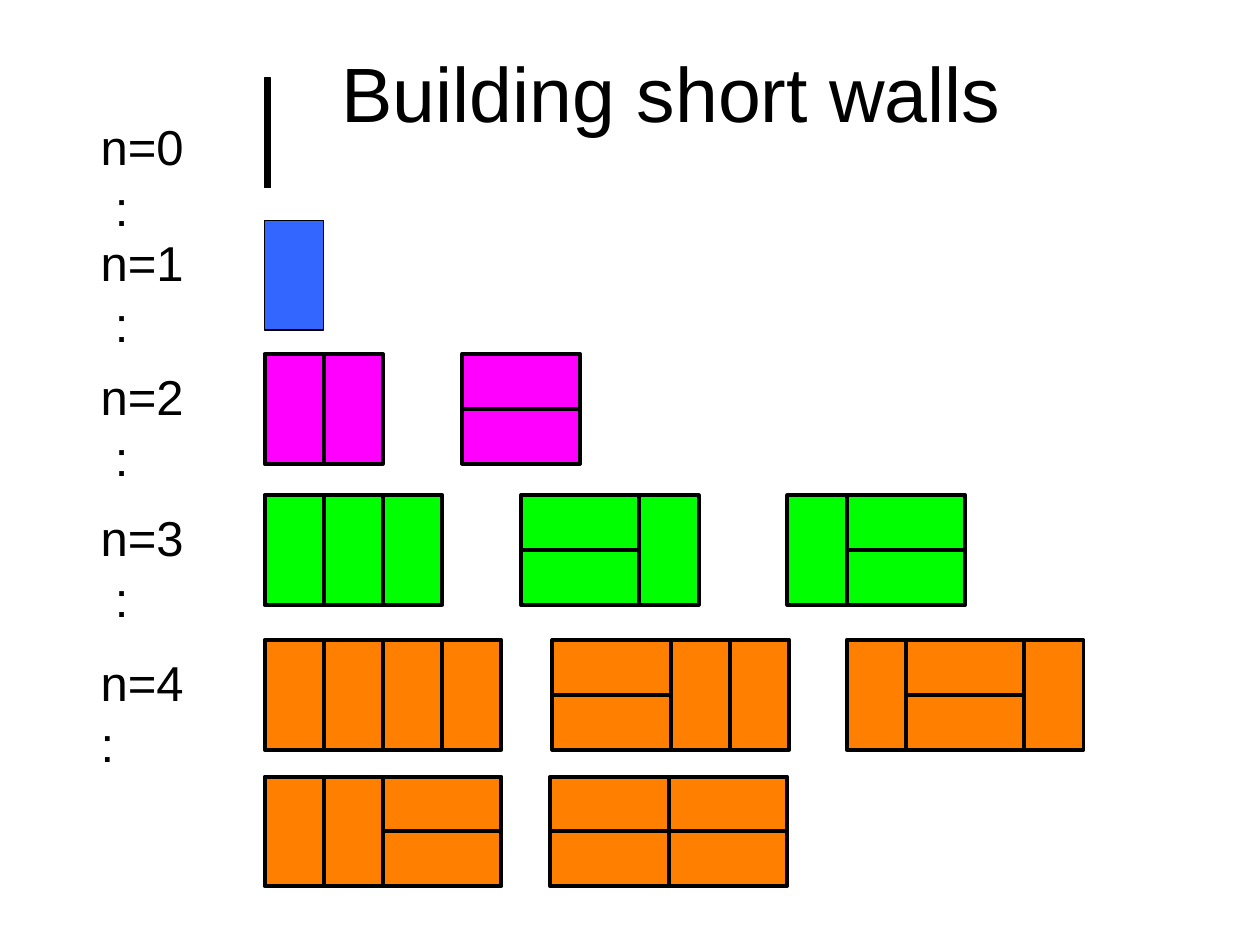
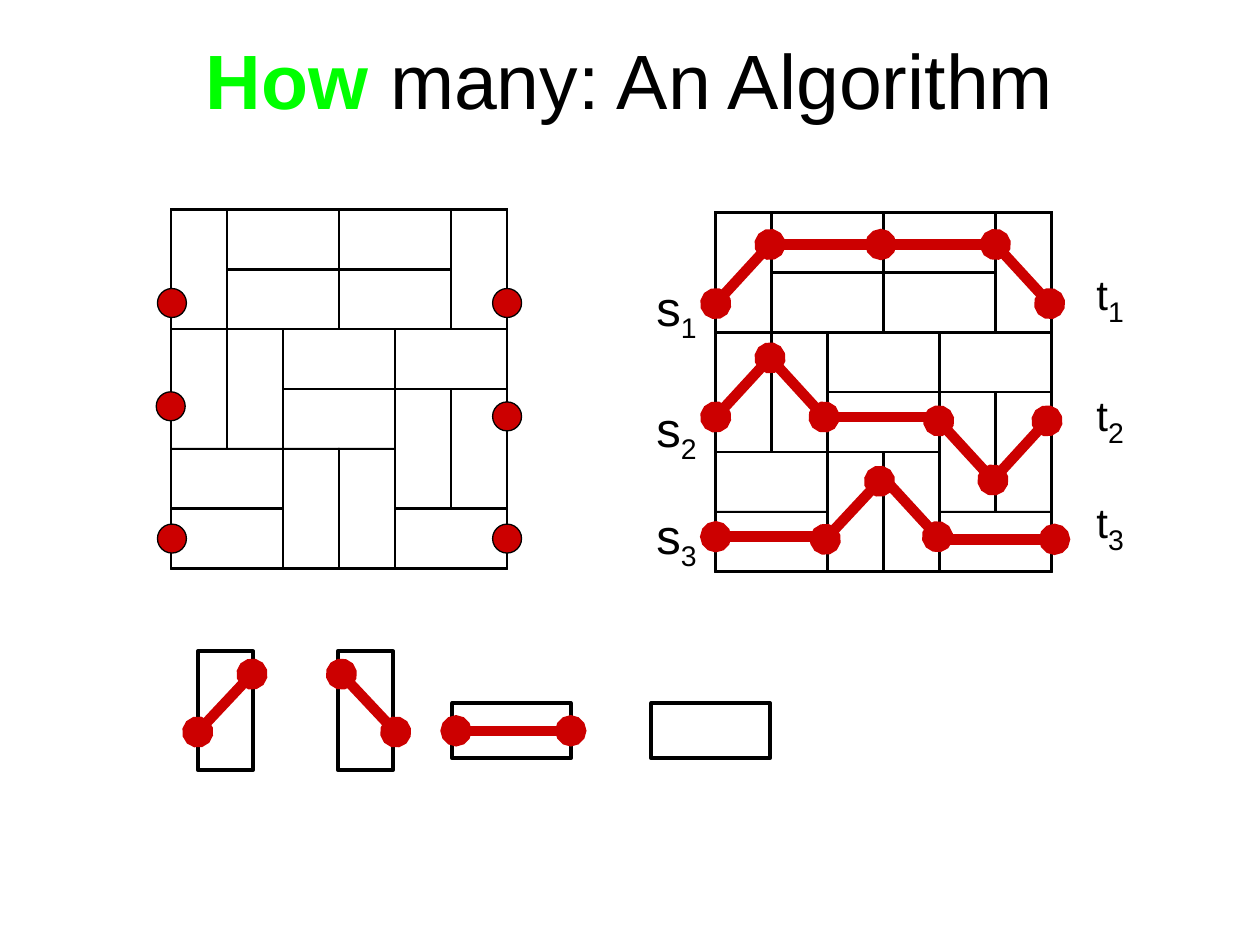
import pptx
import pptx.util
import pptx.dml.color
import pptx.enum.shapes
import pptx.enum.text
import pptx.oxml.ns
from lxml import etree

Pt = pptx.util.Pt
hue = pptx.dml.color.RGBColor.from_string
Kind = pptx.enum.shapes.MSO_SHAPE
Align = pptx.enum.text.PP_ALIGN
Anchor = pptx.enum.text.MSO_ANCHOR
qn = pptx.oxml.ns.qn

BLACK, RED, GREEN = "000000", "CC0000", "00FF00"
BLUE, PINK, ORANGE = "3366FF", "FF00FF", "FF8000"
FONT = "Arial"
TITLE = dict(size=44, wide=612, high=90, wrap=True)


def text(page, *runs, left, top, wide, high, size=28, align=Align.CENTER,
         anchor=Anchor.MIDDLE, wrap=False, hang=0, pitch=None):
    """Each run is a string or a pair of a string and its own format."""
    frame = page.shapes.add_textbox(Pt(left), Pt(top), Pt(wide), Pt(high)).text_frame
    frame.word_wrap = wrap
    frame.vertical_anchor = anchor
    para = frame.paragraphs[0]
    para.alignment = align
    para.line_spacing = pitch
    if hang:
        props = para._p.get_or_add_pPr()
        props.set("marL", str(Pt(hang)))
        props.set("indent", str(-Pt(hang)))
    for part in runs:
        words, form = (part, {}) if isinstance(part, str) else part
        run = para.add_run()
        run.text = words
        run.font.name = FONT
        run.font.size = Pt(form.get("size", size))
        run.font.bold = form.get("bold", False)
        run.font.color.rgb = hue(form.get("tone", BLACK))
        if "base" in form:
            run._r.get_or_add_rPr().set("baseline", str(form["base"]))


def box(page, left, top, wide, high, fill=None, line=2.25, kind=Kind.RECTANGLE):
    shape = page.shapes.add_shape(kind, Pt(left), Pt(top), Pt(wide), Pt(high))
    shape.shadow.inherit = False
    if fill:
        shape.fill.solid()
        shape.fill.fore_color.rgb = hue(fill)
    else:
        shape.fill.background()
    shape.line.color.rgb = hue(BLACK)
    shape.line.width = Pt(line)
    return shape


deck = pptx.Presentation()
deck.slide_width, deck.slide_height = Pt(720), Pt(540)
blank = deck.slide_layouts[6]

# Slide 1: short walls
page = deck.slides.add_slide(blank)
text(page, "Building short walls", left=77.76, top=7.2, **TITLE)

# Row labels; the colon drops to a second line in all but the last
for n, top in enumerate([59.76, 126, 202.32, 282.96, 365.76]):
    text(page, f"n={n} :", left=50.4, top=top + 2, wide=73.44, high=36,
         align=Align.LEFT, anchor=Anchor.TOP, wrap=n < 4, hang=8.2 if n < 4 else 0,
         pitch=1.04)

# Walls: V is one upright brick, H is two flat bricks stacked
SIDE, TALL, START = 33.84, 62.64, 151.2
box(page, START, 44.64, 3.6, TALL, BLACK, 0.75)
box(page, START, 126, SIDE, TALL, BLUE, 0.75)
walls = [
    (PINK, 202.32, [(START, "VV"), (263.9, "H")]),
    (GREEN, 282.96, [(START, "VVV"), (297.7, "HV"), (450, "VH")]),
    (ORANGE, 365.76, [(START, "VVVV"), (315.7, "HVV"), (483.84, "VHV")]),
    (ORANGE, 443.8, [(START, "VVH"), (314.4, "HH")]),
]
for fill, top, row in walls:
    for left, bricks in row:
        for brick in bricks:
            if brick == "V":
                box(page, left, top, SIDE, TALL, fill)
                left += SIDE
            else:
                for half in range(2):
                    box(page, left, top + half * TALL / 2, 2 * SIDE, TALL / 2, fill)
                left += 2 * SIDE

# Slide 2: the algorithm
page = deck.slides.add_slide(blank)
text(page, ("How ", dict(bold=True, tone=GREEN)), "many: An Algorithm",
     left=54, top=0, **TITLE)

# Two equal walls, 6 by 6 cells, drawn by their seams
COL, ROW, THIN = 32, 34.2, 0.9
flat = [(6, 0, 6), (5, 0, 2), (4, 0, 4), (2, 0, 6),
        (0, 0, 6), (1, 1, 5), (3, 2, 6), (5, 4, 6)]
upright = [(0, 0, 6), (1, 0, 4), (2, 2, 6), (3, 4, 6), (4, 2, 6),
           (3, 0, 2), (5, 3, 5), (5, 0, 2), (6, 0, 6)]
for left, top in [(97.2, 119.2), (408.24, 121)]:
    for row, start, end in flat:
        box(page, left + start * COL, top + row * ROW, (end - start) * COL + THIN,
            THIN, BLACK, 0.38)
    for col, start, end in upright:
        box(page, left + col * COL, top + start * ROW, THIN, (end - start) * ROW,
            BLACK, 0.38)

# Brick types
for left in (113.04, 192.96):
    box(page, left, 372.24, 31.68, 67.68)
cross, plain = [box(page, left, 401.76, 67.68, 31.68) for left in (258.48, 372.24)]

# Paths: start, end, and which ends carry a dot
paths = [
    (409, 173.5, 440, 139.7, "both"), (409, 238.3, 440, 204.5, "both"),
    (471.6, 308.2, 502.6, 275, "both"), (599.8, 173.5, 568.8, 139.7, "both"),
    (535.7, 306.7, 504.7, 272.9, "head"), (470.9, 238.3, 440, 204.5, "head"),
    (536.4, 240.5, 567.4, 274.3, "both"), (598.3, 240.5, 567.4, 274.3, "head"),
    (503.3, 139.7, 440.6, 139.7, "head"), (536.4, 238.3, 470.9, 238.3, ""),
    (602.6, 308.2, 536.4, 308.2, "head"), (475.2, 306.7, 409, 306.7, "tail"),
    (568.8, 139.7, 502.6, 139.7, ""),
    (113, 418.3, 144, 385.2, "both"), (226.1, 418.3, 195.1, 385.2, "both"),
    (326.2, 417.6, 260.6, 417.6, "both"),
]
for x1, y1, x2, y2, dots in paths:
    path = page.shapes.add_connector(pptx.enum.shapes.MSO_CONNECTOR.STRAIGHT,
                                     Pt(x1), Pt(y1), Pt(x2), Pt(y2))
    path.line.color.rgb = hue(RED)
    path.line.width = Pt(6)
    for end in ("head", "tail"):
        if dots in (end, "both"):
            etree.SubElement(path.line._get_or_add_ln(), qn(f"a:{end}End"), type="oval")
    etree.SubElement(path._element.spPr, qn("a:effectLst"))
path.begin_connect(cross, 3)

# Dots on the sides of the left wall
for left, top in [(90, 164.9), (89.3, 223.9), (90, 299.5),
                  (281.5, 299.5), (281.5, 229.7), (281.5, 164.9)]:
    box(page, left, top, 16.56, 16.56, RED, 0.75, Kind.OVAL)

# Sources and targets
for name, size, left, wide, high, tops in [
        ("t", 24, 618.48, 31.68, 36, (150.48, 219.6, 280.8)),
        ("s", 28, 367.2, 38.88, 41.04, (156.96, 226.08, 287.28))]:
    for n, top in enumerate(tops, 1):
        text(page, (name, dict(size=size)), (str(n), dict(base=-25000)),
             left=left, top=top, wide=wide, high=high)

deck.save("out.pptx")
